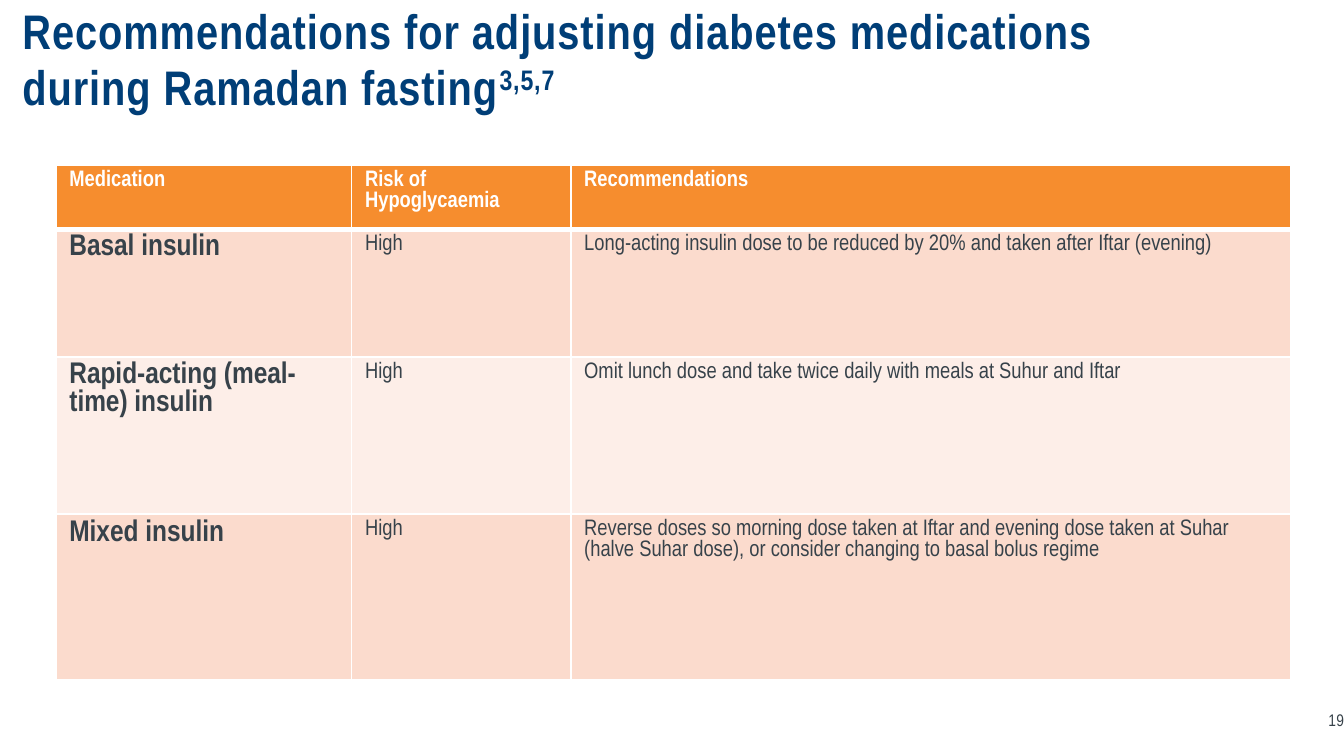
from dataclasses import dataclass

from pptx import Presentation
from pptx.dml.color import RGBColor
from pptx.enum import text as tx
from pptx.oxml import parse_xml
from pptx.oxml.ns import nsdecls
from pptx.util import Pt


@dataclass(frozen=True)
class Theme:
    font: str = "Arial Narrow"
    navy: str = "003E77"
    ink: str = "37424A"
    white: str = "FFFFFF"
    head: str = "F68D2E"
    bands: tuple = ("FBDBCD", "FDEEE8")
    title: float = 26
    drug: float = 16
    body: float = 12
    note: float = 9


THEME = Theme()
HEADS = ["Medication", "Risk of Hypoglycaemia", "Recommendations"]
ADVICE = [
    ["Basal insulin", "High",
     "Long-acting insulin dose to be reduced by 20% and taken after Iftar (evening)"],
    ["Rapid-acting (meal-time) insulin", "High",
     "Omit lunch dose and take twice daily with meals at Suhur and Iftar"],
    ["Mixed insulin", "High",
     "Reverse doses so morning dose taken at Iftar and evening dose taken at Suhar "
     "(halve Suhar dose), or consider changing to basal bolus regime"],
]
COLS = [158.4, 117.4, 385.9]
ROWS = [33.8, 68.4, 84.4, 88.9]


def add_run(para, words, size, color, bold=False, space=0, base=0):
    run = para.add_run()
    run.text = words
    font = run.font
    font.name, font.size, font.bold = THEME.font, Pt(size), bold
    font.color.rgb = RGBColor.from_string(color)
    props = run._r.get_or_add_rPr()
    if space:
        props.set("spc", str(round(space * 100)))
    if base:
        props.set("baseline", str(base * 1000))


def add_text(slide, box):
    """Add an inset-free text box and return its first paragraph."""
    frame = slide.shapes.add_textbox(*map(Pt, box)).text_frame
    frame.word_wrap = True
    frame.margin_left = frame.margin_right = 0
    frame.margin_top = frame.margin_bottom = 0
    return frame.paragraphs[0]


def add_title(slide, box):
    para = add_text(slide, box)
    para.line_spacing = 0.95
    style = dict(size=THEME.title, color=THEME.navy, bold=True, space=0.5)
    add_run(para, "Recommendations for adjusting diabetes medications "
            "during Ramadan fasting", **style)
    add_run(para, "3,5,7", base=30, **style)


def add_number(slide, box):
    para = add_text(slide, box)
    para.alignment = tx.PP_ALIGN.RIGHT
    add_run(para, "19", THEME.note, THEME.ink, space=0.1)


def add_edges(cell, widths):
    props = cell._tc.get_or_add_tcPr()
    for i, (side, width) in enumerate(zip("LRTB", widths)):
        props.insert(i, parse_xml(
            f'<a:ln{side} {nsdecls("a")} w="{Pt(width)}"><a:solidFill>'
            f'<a:srgbClr val="{THEME.white}"/></a:solidFill></a:ln{side}>'))


def fill_cell(cell, words, fill, size, color, bold, widths):
    cell.fill.solid()
    cell.fill.fore_color.rgb = RGBColor.from_string(fill)
    cell.margin_left = cell.margin_right = Pt(7.2)
    cell.margin_top = cell.margin_bottom = Pt(2.7)
    para = cell.text_frame.paragraphs[0]
    para.line_spacing = 1.0
    add_run(para, words, size, color, bold)
    add_edges(cell, widths)


def add_advice(slide, box):
    rows = [HEADS] + ADVICE
    table = slide.shapes.add_table(len(rows), len(HEADS), *map(Pt, box)).table
    for col, width in zip(table.columns, COLS):
        col.width = Pt(width)
    for r, (words, height) in enumerate(zip(rows, ROWS)):
        table.rows[r].height = Pt(height)
        top, bottom = (3 if r == 1 else 1), (3 if r == 0 else 1)
        for c, word in enumerate(words):
            # Header row, then banded rows led by a bold drug name
            if r == 0:
                look = THEME.head, THEME.body, THEME.white, True
            else:
                size = THEME.drug if c == 0 else THEME.body
                look = THEME.bands[(r - 1) % 2], size, THEME.ink, c == 0
            fill_cell(table.cell(r, c), word, *look, (1, 1, top, bottom))


def main():
    deck = Presentation()
    deck.slide_width, deck.slide_height = Pt(720), Pt(405)
    slide = deck.slides.add_slide(deck.slide_layouts[6])
    add_number(slide, (697.5, 380, 22.5, 17.5))
    add_advice(slide, (30, 88.5, sum(COLS), sum(ROWS)))
    add_title(slide, (12, 3, 647, 68.5))
    deck.save("out.pptx")


if __name__ == "__main__":
    main()
